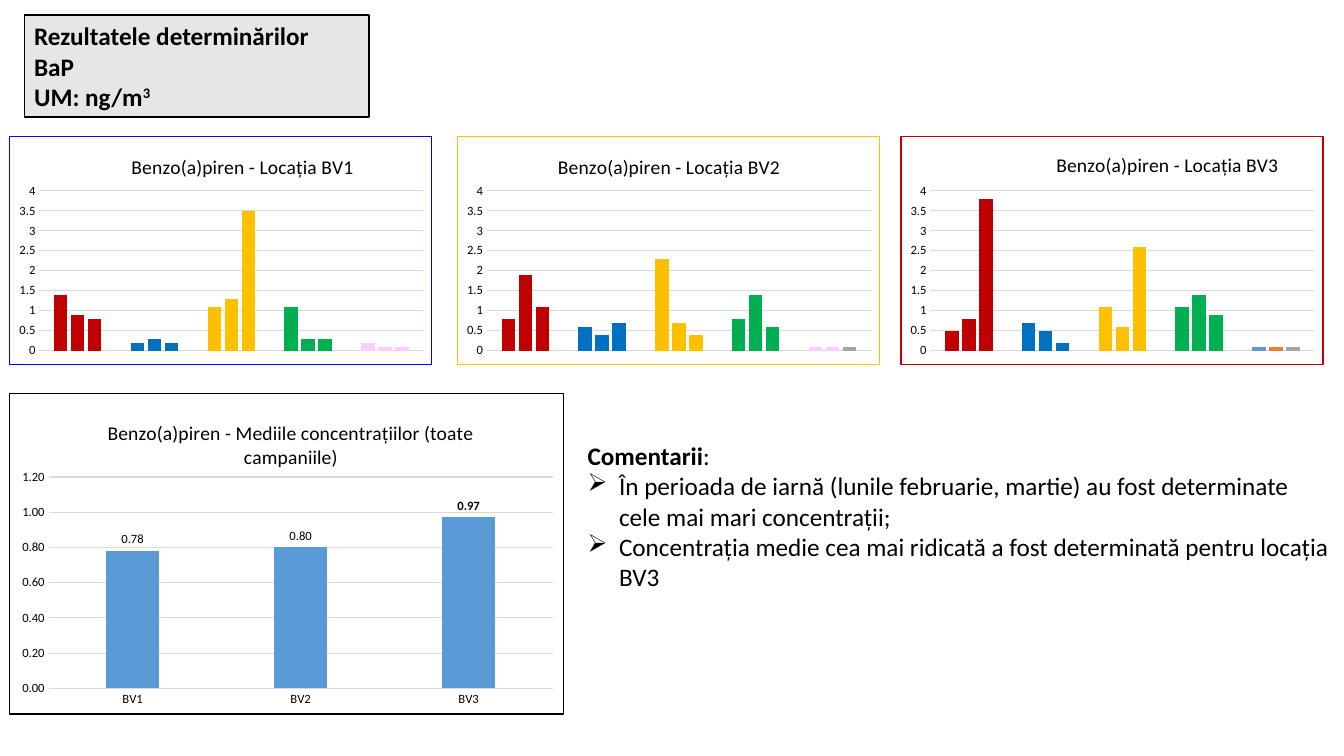
from dataclasses import dataclass

from pptx import Presentation
from pptx import util as u
from pptx.chart.data import CategoryChartData
from pptx.dml.color import RGBColor
from pptx.enum import chart as ch, shapes, text
from pptx.oxml import parse_xml
from pptx.oxml.ns import nsdecls, qn


@dataclass(frozen=True)
class Theme:
    font: str = "Calibri"
    ink: str = "000000"
    paper: str = "FFFFFF"
    panel: str = "E7E6E6"
    grid: str = "D9D9D9"
    blue: str = "0000FF"
    gold: str = "FFC000"
    red: str = "C00000"
    series: tuple = ("5B9BD5", "ED7D31", "A5A5A5")
    campaigns: tuple = ("C00000", "0070C0", "FFC000", "00B050", "FFCCFF")
    body: float = 18
    title: float = 14
    axis: float = 9


class Deck:
    def __init__(self, prs, theme):
        self.theme = theme
        self.s = prs.slides.add_slide(prs.slide_layouts[6])

    def style(self, font, size, bold=False):
        font.name, font.size, font.bold = self.theme.font, u.Pt(size), bold
        font.color.rgb = RGBColor.from_string(self.theme.ink)

    def paint(self, fmt, color):
        fmt.fill.solid()
        fmt.fill.fore_color.rgb = RGBColor.from_string(color)

    def rule(self, line, color, width=0.75):
        line.color.rgb = RGBColor.from_string(color)
        line.width = u.Pt(width)

    def fill_text(self, tf, lines, bold=False):
        """Each line is a list of runs."""
        tf.word_wrap = True
        for i, runs in enumerate(lines):
            p = tf.paragraphs[0] if i == 0 else tf.add_paragraph()
            p.alignment = text.PP_ALIGN.LEFT
            self.style(p.font, self.theme.body, bold)
            for run in runs:
                p.add_run().text = run

    def panel(self, box, lines):
        sp = self.s.shapes.add_shape(shapes.MSO_SHAPE.RECTANGLE, *map(u.Pt, box))
        sp.shadow.inherit = False
        self.paint(sp, self.theme.panel)
        self.rule(sp.line, self.theme.ink, 1)
        self.fill_text(sp.text_frame, lines, bold=True)
        return sp.text_frame

    def comments(self, box, heading, items):
        tf = self.s.shapes.add_textbox(*map(u.Pt, box)).text_frame
        self.fill_text(tf, [[heading, ":"]] + [[item] for item in items])
        tf.paragraphs[0].runs[0].font.bold = True
        for p in tf.paragraphs[1:]:
            pPr = p._p.get_or_add_pPr()
            pPr.set("marL", str(u.Pt(22.5)))
            pPr.set("indent", str(-u.Pt(22.5)))
            bullet = parse_xml(f'<a:buChar {nsdecls("a")} char="➢"/>')
            pPr.insert_element_before(bullet, "a:tabLst", "a:defRPr", "a:extLst")

    def layout(self, **fractions):
        target = "<c:layoutTarget val='inner'/>" if "w" in fractions else ""
        modes = "".join(f"<c:{k}Mode val='edge'/>" for k in fractions if k in "xy")
        sizes = "".join(f"<c:{k} val='{v}'/>" for k, v in fractions.items())
        return parse_xml(f"<c:layout {nsdecls('c')}><c:manualLayout>{target}{modes}"
                         f"{sizes}</c:manualLayout></c:layout>")

    def columns(self, box, title, title_at, plot_at, border, cats, rows, top, step, fmt):
        t = self.theme
        data = CategoryChartData()
        data.categories = cats
        for i, row in enumerate(rows, 1):
            data.add_series(f"Series {i}", row)
        chart = self.s.shapes.add_chart(
            ch.XL_CHART_TYPE.COLUMN_CLUSTERED, *map(u.Pt, box), data).chart
        self.style(chart.font, 10)
        chart.has_legend = False

        # Title and plot position
        tf = chart.chart_title.text_frame
        tf.text = title
        self.style(tf.paragraphs[0].font, t.title)
        title_xml = chart.chart_title._element
        area = chart._chartSpace.chart.plotArea
        for parent in (title_xml, area):
            for old in parent.findall(qn("c:layout")):
                parent.remove(old)
        x, y = title_at
        title_xml.find(qn("c:tx")).addnext(self.layout(x=x, y=y))
        x, y, w, h = plot_at
        area.insert(0, self.layout(x=x, y=y, w=w, h=h))

        # Axes
        va, ca = chart.value_axis, chart.category_axis
        va.minimum_scale, va.maximum_scale, va.major_unit = 0, top, step
        va.tick_labels.number_format = fmt
        va.tick_labels.number_format_is_linked = False
        va.format.line.fill.background()
        self.rule(va.major_gridlines.format.line, t.grid)
        self.rule(ca.format.line, t.grid)
        for axis in (va, ca):
            axis.major_tick_mark = ch.XL_TICK_MARK.NONE
            self.style(axis.tick_labels.font, t.axis)

        # Columns
        plot = chart.plots[0]
        plot.gap_width, plot.overlap, plot.vary_by_categories = 219, -27, False
        for series, color in zip(plot.series, t.series):
            self.paint(series.format, color)
            series.invert_if_negative = False

        # Frame
        frame = (f"<c:spPr {nsdecls('c', 'a')}><a:solidFill><a:srgbClr val='{t.paper}'/>"
                 f"</a:solidFill><a:ln w='{u.Pt(1)}'><a:solidFill><a:srgbClr val='{border}'/>"
                 "</a:solidFill></a:ln></c:spPr>")
        chart._chartSpace.chart.addnext(parse_xml(frame))
        return chart

    def location(self, box, name, title_at, border, rows, painted):
        """Chart of one location; painted = campaign colours used per series."""
        chart = self.columns(box, f"Benzo(a)piren - Locația {name}", title_at,
                             (0.07, 0.24, 0.91, 0.7), border, list("12345"), rows,
                             4, 0.5, "General")
        chart.category_axis.visible = False
        for series, count in zip(chart.plots[0].series, painted):
            for i, color in enumerate(self.theme.campaigns[:count]):
                self.paint(series.points[i].format, color)

    def averages(self, box, title, cats, values):
        chart = self.columns(box, title, (0.17, 0.07), (0.07, 0.26, 0.91, 0.66),
                             self.theme.ink, cats, [values], 1.2, 0.2, "0.00")
        series = chart.plots[0].series[0]
        outside = ch.XL_LABEL_POSITION.OUTSIDE_END
        last = series.points[len(values) - 1].data_label
        self.style(last.font, self.theme.axis, bold=True)
        last.position = outside
        labels = series.data_labels
        labels.show_value, labels.position = True, outside
        labels.number_format, labels.number_format_is_linked = "0.00", False
        self.style(labels.font, self.theme.axis)


def main():
    prs = Presentation()
    prs.slide_width, prs.slide_height = u.Pt(960), u.Pt(540)
    theme = Theme()
    deck = Deck(prs, theme)

    # Heading
    tf = deck.panel((17.3, 10.8, 246.2, 72.7),
                    [["Rezultatele determinărilor"], ["BaP"], ["UM: ng/m", "3"]])
    tf.paragraphs[2].runs[1].font._element.set("baseline", "30000")

    # Comments
    deck.comments((412.6, 311, 547.2, 116.6), "Comentarii", [
        "În perioada de iarnă (lunile februarie, martie) au fost determinate "
        "cele mai mari concentrații;",
        "Concentrația medie cea mai ridicată a fost determinată pentru locația BV3"])

    # One chart per location
    locations = [
        ("BV1", 6.5, (0.28, 0.06), theme.blue, (5, 5, 5),
         [(1.4, 0.2, 1.1, 1.1, 0.2), (0.9, 0.3, 1.3, 0.3, 0.1), (0.8, 0.2, 3.5, 0.3, 0.1)]),
        ("BV2", 326.2, (0.23, 0.06), theme.gold, (5, 5, 4),
         [(0.8, 0.6, 2.3, 0.8, 0.1), (1.9, 0.4, 0.7, 1.4, 0.1), (1.1, 0.7, 0.4, 0.6, 0.1)]),
        ("BV3", 643, (0.36, 0.05), theme.red, (4, 4, 4),
         [(0.5, 0.7, 1.1, 1.1, 0.1), (0.8, 0.5, 0.6, 1.4, 0.1), (3.8, 0.2, 2.6, 0.9, 0.1)]),
    ]
    for name, left, title_at, border, painted, rows in locations:
        deck.location((left, 96.8, 302.4, 164), name, title_at, border, rows, painted)

    # Averages over all campaigns
    deck.averages((6.5, 280.8, 396.7, 229.7),
                  "Benzo(a)piren - Mediile concentrațiilor (toate campaniile)",
                  ["BV1", "BV2", "BV3"], (0.78, 0.8, 0.97))
    prs.save("out.pptx")


if __name__ == "__main__":
    main()
